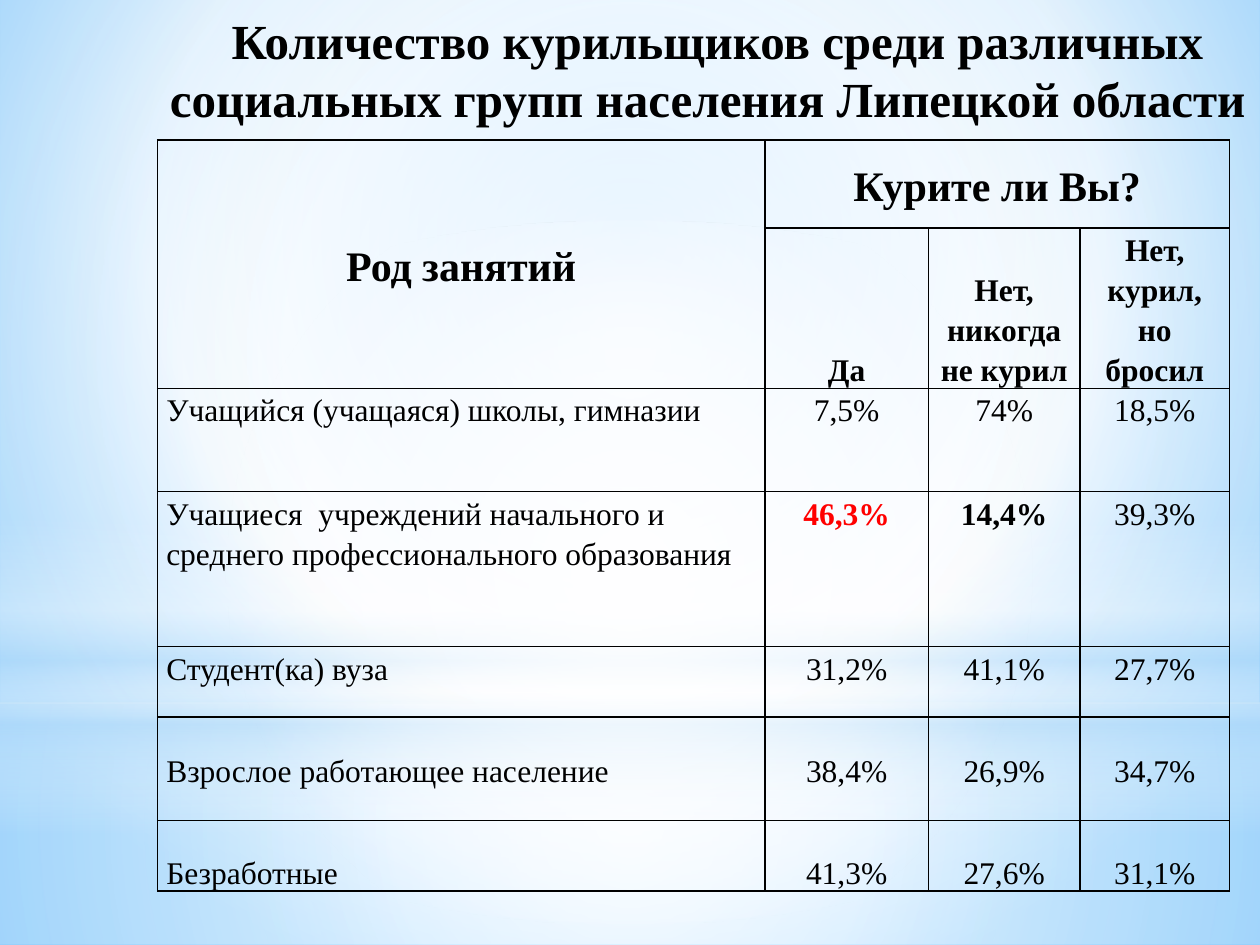
"""Build a slide with a table of smoking rates by social group."""
from lxml.etree import SubElement
from pptx import Presentation
from pptx.dml.color import RGBColor
from pptx.enum.shapes import MSO_SHAPE
from pptx.enum.text import MSO_ANCHOR, PP_ALIGN
from pptx.oxml import parse_xml
from pptx.oxml.ns import nsdecls, qn
from pptx.util import Inches, Pt

BLACK = RGBColor(0x00, 0x00, 0x00)
RED = RGBColor(0xFF, 0x00, 0x00)
WHITE = RGBColor(0xFF, 0xFF, 0xFF)
PALE_BLUE = RGBColor(0xB4, 0xDC, 0xFA)
SKY_BLUE = RGBColor(0x9E, 0xD5, 0xFF)
DEEP_BLUE = RGBColor(0x5B, 0xB9, 0xFF)
FONT = "Times New Roman"


def set_gradient(properties, stops, focus):
    gradient = parse_xml(f'<a:gradFill {nsdecls("a")} rotWithShape="1"><a:gsLst/></a:gradFill>')
    for position, color, opacity in stops:
        stop = SubElement(gradient[0], qn("a:gs"), pos=str(position * 1000))
        color_element = SubElement(stop, qn("a:srgbClr"), val=str(color))
        SubElement(color_element, qn("a:alpha"), val=str(opacity * 1000))
    if focus:
        path_element = SubElement(gradient, qn("a:path"), path="circle")
        edges = {side: str(value * 1000) for side, value in zip("ltrb", focus)}
        SubElement(path_element, qn("a:fillToRect"), **edges)
    else:
        SubElement(gradient, qn("a:lin"), ang="5400000", scaled="0")
    properties.replace(properties.find(qn("a:solidFill")), gradient)


def add_borders(cell):
    cell_properties = cell._tc.get_or_add_tcPr()
    for index, side in enumerate(("lnL", "lnR", "lnT", "lnB")):
        cell_properties.insert(index, parse_xml(
            f'<a:{side} {nsdecls("a")} w="{Pt(1)}"><a:solidFill>'
            f'<a:srgbClr val="{BLACK}"/></a:solidFill></a:{side}>'))


presentation = Presentation()
presentation.slide_width = Inches(10)
presentation.slide_height = Inches(7.5)
slide = presentation.slides.add_slide(presentation.slide_layouts[6])

slide.background.fill.solid()
set_gradient(slide.element.xpath(".//p:bgPr")[0],
             [(0, SKY_BLUE, 100), (60, WHITE, 100), (100, DEEP_BLUE, 100)],
             (20, 10, 20, 60))

CENTER = (50, 50, 50, 50)
glows = [
    (MSO_SHAPE.RECTANGLE, 5.58, 1.92, CENTER,
     [(0, WHITE, 91), (37, WHITE, 76), (100, PALE_BLUE, 79)]),
    (MSO_SHAPE.RECTANGLE, 0, 5.58, CENTER,
     [(0, WHITE, 89), (48, WHITE, 62), (100, PALE_BLUE, 79)]),
    (MSO_SHAPE.RECTANGLE, 4.12, 2.5, None,
     [(0, WHITE, 0), (29, WHITE, 30), (45, PALE_BLUE, 40),
      (55, WHITE, 26), (65, PALE_BLUE, 60), (100, WHITE, 0)]),
    (MSO_SHAPE.OVAL, 1.75, 5.58, CENTER, [(0, WHITE, 100), (56, WHITE, 0)]),
]
for kind, top, height, focus, stops in glows:
    shape = slide.shapes.add_shape(kind, 0, Inches(top), Inches(10), Inches(height))
    shape.shadow.inherit = False
    shape.line.fill.background()
    shape.fill.solid()
    set_gradient(shape.element.spPr, stops, focus)

rows = [
    ("Род занятий", "Курите ли Вы?", "", ""),
    ("", "Да", "Нет, никогда не курил", "Нет, курил, но бросил"),
    ("Учащийся (учащаяся) школы, гимназии", "7,5%", "74%", "18,5%"),
    ("Учащиеся  учреждений начального и среднего профессионального образования",
     "46,3%", "14,4%", "39,3%"),
    ("Студент(ка) вуза", "31,2%", "41,1%", "27,7%"),
    ("Взрослое работающее население", "38,4%", "26,9%", "34,7%"),
    ("Безработные", "41,3%", "27,6%", "31,1%"),
]
column_widths = [4.82, 1.3, 1.2, 1.19]
row_heights = [0.7, 1.27, 0.82, 1.23, 0.56, 0.82, 0.56]
TOP, MIDDLE, BOTTOM = MSO_ANCHOR.TOP, MSO_ANCHOR.MIDDLE, MSO_ANCHOR.BOTTOM
row_anchors = [MIDDLE, BOTTOM, TOP, TOP, TOP, MIDDLE, BOTTOM]

table = slide.shapes.add_table(
    len(rows), len(column_widths), Inches(1.25), Inches(1.11),
    Inches(sum(column_widths)), Inches(sum(row_heights))).table
table.first_row = False
table.horz_banding = False
for column, width in zip(table.columns, column_widths):
    column.width = Inches(width)
table.cell(0, 0).merge(table.cell(1, 0))
table.cell(0, 1).merge(table.cell(0, 3))

for row_index, texts in enumerate(rows):
    table.rows[row_index].height = Inches(row_heights[row_index])
    for column_index, text in enumerate(texts):
        cell = table.cell(row_index, column_index)
        cell.fill.background()
        add_borders(cell)
        cell.margin_left = cell.margin_right = Inches(0.07)
        cell.margin_top = cell.margin_bottom = 0
        cell.vertical_anchor = row_anchors[row_index]
        if cell.is_spanned:
            continue
        cell.text = text
        paragraph = cell.text_frame.paragraphs[0]
        is_label = row_index > 1 and column_index == 0
        paragraph.alignment = PP_ALIGN.LEFT if is_label else PP_ALIGN.CENTER
        paragraph.line_spacing = 1.15
        paragraph.font.name = FONT
        paragraph.font.size = Pt(24 if row_index == 0 else 18)
        paragraph.font.bold = row_index < 2 or text in ("46,3%", "14,4%")
        paragraph.font.color.rgb = RED if text == "46,3%" else BLACK

title = slide.shapes.add_textbox(Inches(1.25), 0, Inches(8.75), Inches(1.38))
title_frame = title.text_frame
title_frame.word_wrap = True
title_frame.vertical_anchor = TOP
title_frame.margin_top = Inches(0.08)
title_frame.text = "Количество курильщиков среди различных социальных групп населения Липецкой области"
paragraph = title_frame.paragraphs[0]
paragraph._p.get_or_add_pPr().set("indent", str(Inches(0.49)))
paragraph.font.name = FONT
paragraph.font.size = Pt(28)
paragraph.font.bold = True
paragraph.font.color.rgb = BLACK

presentation.save("out.pptx")
